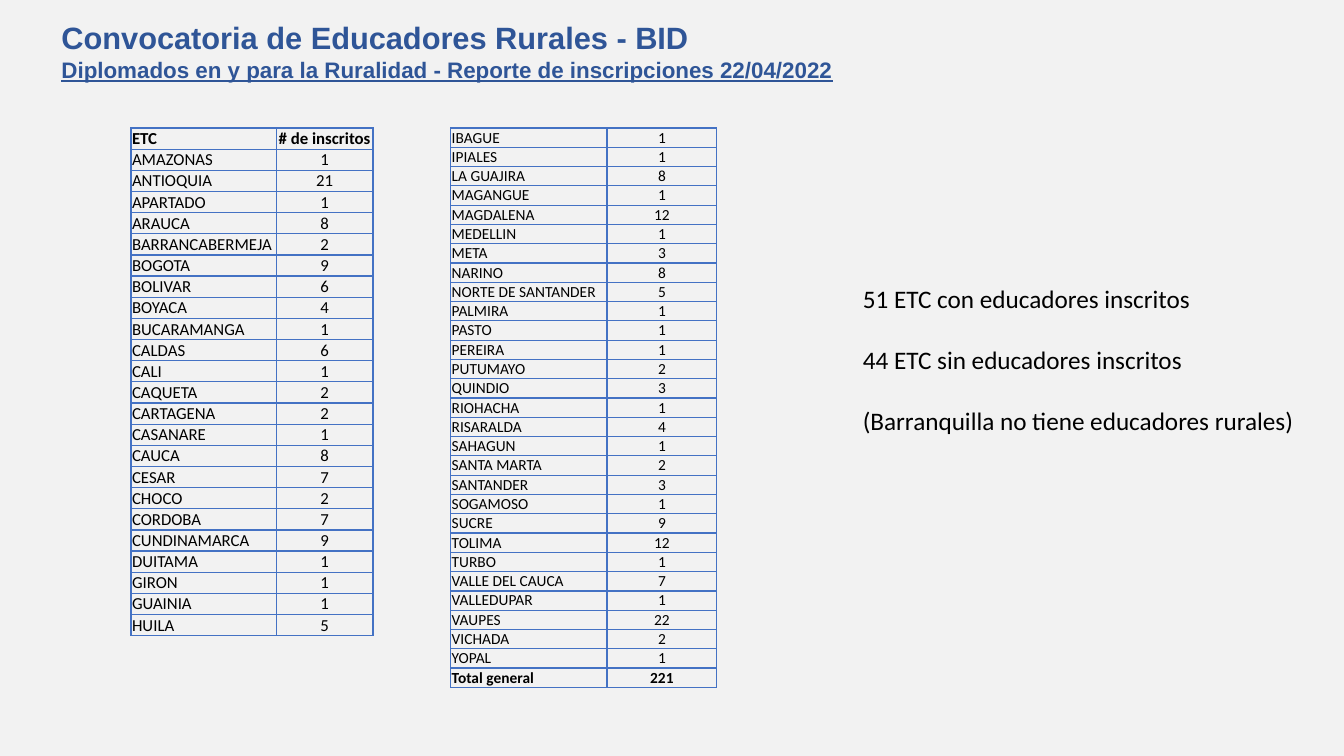
from lxml.etree import SubElement
from pptx import Presentation
from pptx.dml.color import RGBColor
from pptx.enum.text import MSO_ANCHOR as ANCHOR, MSO_AUTO_SIZE as FIT, PP_ALIGN as ALIGN
from pptx.oxml.ns import qn
from pptx.util import Inches, Pt

BACKGROUND = RGBColor(0xF2, 0xF2, 0xF2)
TITLE_BLUE = RGBColor(0x2F, 0x55, 0x97)
BORDER_BLUE = RGBColor(0x44, 0x72, 0xC4)
BLACK = RGBColor(0, 0, 0)

TITLE_LINES = [
    ("Convocatoria de Educadores Rurales - BID", {"size": Pt(22)}),
    ("Diplomados en y para la Ruralidad - Reporte de inscripciones 22/04/2022",
     {"size": Pt(16), "underline": True}),
]
NOTES = [
    "51 ETC con educadores inscritos",
    "44 ETC sin educadores inscritos",
    "(Barranquilla no tiene educadores rurales)",
]
FIRST_ROWS = [
    ("ETC", "# de inscritos"), ("AMAZONAS", 1), ("ANTIOQUIA", 21), ("APARTADO", 1),
    ("ARAUCA", 8), ("BARRANCABERMEJA", 2), ("BOGOTA", 9), ("BOLIVAR", 6),
    ("BOYACA", 4), ("BUCARAMANGA", 1), ("CALDAS", 6), ("CALI", 1),
    ("CAQUETA", 2), ("CARTAGENA", 2), ("CASANARE", 1), ("CAUCA", 8),
    ("CESAR", 7), ("CHOCO", 2), ("CORDOBA", 7), ("CUNDINAMARCA", 9),
    ("DUITAMA", 1), ("GIRON", 1), ("GUAINIA", 1), ("HUILA", 5),
]
SECOND_ROWS = [
    ("IBAGUE", 1), ("IPIALES", 1), ("LA GUAJIRA", 8), ("MAGANGUE", 1),
    ("MAGDALENA", 12), ("MEDELLIN", 1), ("META", 3), ("NARINO", 8),
    ("NORTE DE SANTANDER", 5), ("PALMIRA", 1), ("PASTO", 1), ("PEREIRA", 1),
    ("PUTUMAYO", 2), ("QUINDIO", 3), ("RIOHACHA", 1), ("RISARALDA", 4),
    ("SAHAGUN", 1), ("SANTA MARTA", 2), ("SANTANDER", 3), ("SOGAMOSO", 1),
    ("SUCRE", 9), ("TOLIMA", 12), ("TURBO", 1), ("VALLE DEL CAUCA", 7),
    ("VALLEDUPAR", 1), ("VAUPES", 22), ("VICHADA", 2), ("YOPAL", 1),
    ("Total general", 221),
]


def set_attrs(obj, values):
    """Set each named attribute of an object."""
    for name, value in values.items():
        setattr(obj, name, value)


def add_run(p, text, color, **font):
    """Add a formatted run to a paragraph."""
    r = p.add_run()
    r.text = text
    set_attrs(r.font, font)
    r.font.color.rgb = color


def fill_title(sp):
    """Place the title and write its two lines."""
    set_attrs(sp, {"left": Inches(0.51), "top": Inches(0.14),
                   "width": Inches(8.73), "height": Inches(0.74)})
    tf = sp.text_frame
    set_attrs(tf, {"word_wrap": True, "auto_size": FIT.NONE,
                   "vertical_anchor": ANCHOR.TOP})
    for i, (text, font) in enumerate(TITLE_LINES):
        p = tf.add_paragraph() if i else tf.paragraphs[0]
        p.alignment = ALIGN.LEFT
        add_run(p, text, TITLE_BLUE, name="Arial", bold=True, **font)


def add_notes(s):
    """Add the spaced summary lines at the right."""
    sp = s.shapes.add_textbox(Inches(8.46), Inches(2.76), Inches(4.53), Inches(1.62))
    tf = sp.text_frame
    tf.word_wrap = True
    for i, text in enumerate(NOTES):
        p = tf.add_paragraph() if i else tf.paragraphs[0]
        if i:
            p.space_before = Pt(22)
        add_run(p, text, BLACK, name="Calibri", size=Pt(18))


def add_borders(cell):
    """Draw a thin blue line on each side of a cell."""
    tc_pr = cell._tc.get_or_add_tcPr()
    for side in ("lnL", "lnR", "lnT", "lnB"):
        ln = SubElement(tc_pr, qn(f"a:{side}"), w=str(Pt(1)))
        fill = SubElement(ln, qn("a:solidFill"))
        SubElement(fill, qn("a:srgbClr"), val=str(BORDER_BLUE))


def add_count_table(s, rows, left, widths, height, size, bold_row):
    """Add a table of territories and their enrolled counts."""
    frame = s.shapes.add_table(len(rows), len(widths), Inches(left), Inches(1.27),
                               Inches(sum(widths)), Inches(height))
    table = frame.table
    set_attrs(table, {"first_row": False, "horz_banding": False})
    for column, width in zip(table.columns, widths):
        column.width = Inches(width)
    for i, values in enumerate(rows):
        table.rows[i].height = Inches(height / len(rows))
        for j, value in enumerate(values):
            cell = table.cell(i, j)
            set_attrs(cell, {"margin_left": Inches(0.01), "margin_right": Inches(0.01),
                             "margin_top": 0, "margin_bottom": 0,
                             "vertical_anchor": ANCHOR.BOTTOM})
            add_borders(cell)
            cell.fill.background()
            p = cell.text_frame.paragraphs[0]
            p.alignment = ALIGN.CENTER if j else ALIGN.LEFT
            add_run(p, str(value), BLACK, name="Calibri", size=Pt(size),
                    bold=i == bold_row)


def main():
    """Build and save the enrolment slide."""
    prs = Presentation()
    set_attrs(prs, {"slide_width": Inches(13.33), "slide_height": Inches(7.5)})
    s = prs.slides.add_slide(prs.slide_layouts.get_by_name("Title Only"))
    s.background.fill.solid()
    s.background.fill.fore_color.rgb = BACKGROUND
    fill_title(s.shapes.title)
    add_notes(s)
    add_count_table(s, FIRST_ROWS, 1.3, (1.44, 0.96), 5.04, 12, 0)
    add_count_table(s, SECOND_ROWS, 4.47, (1.55, 1.09), 5.55, 11, len(SECOND_ROWS) - 1)
    prs.save("out.pptx")


if __name__ == "__main__":
    main()
